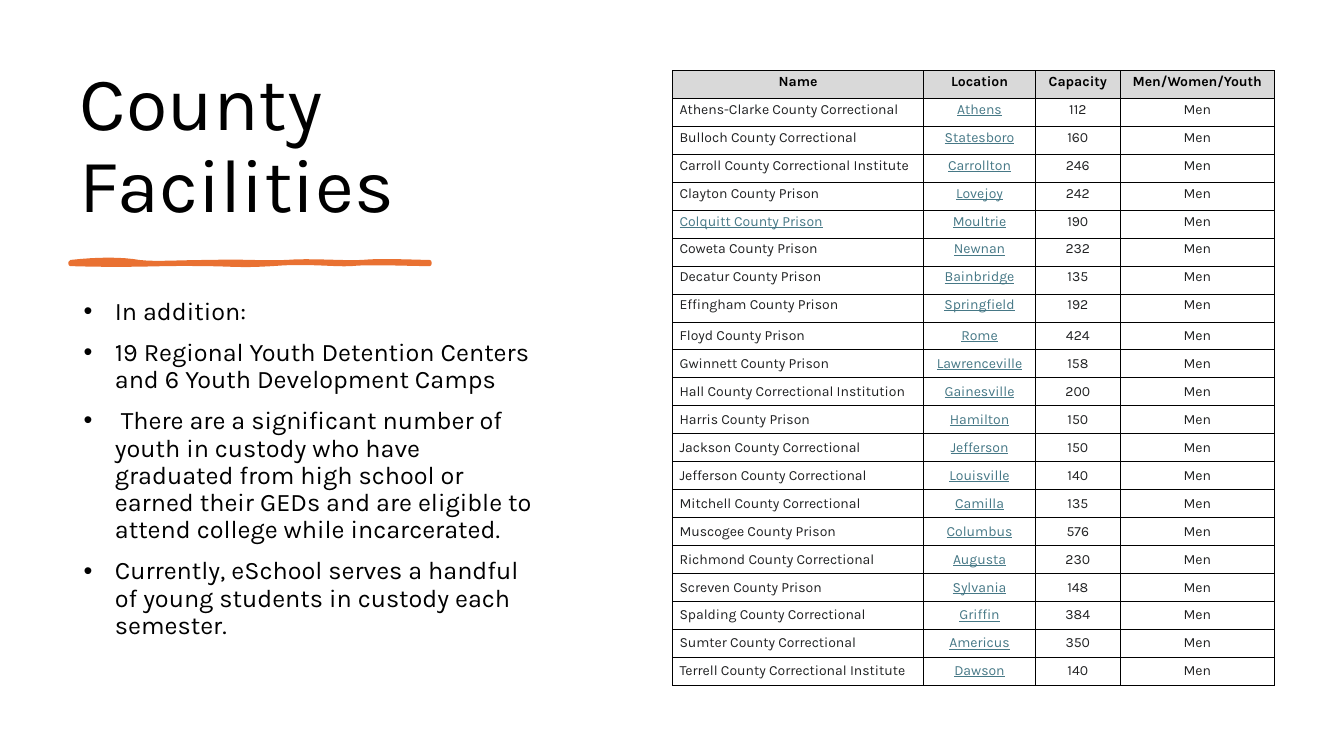
import pptx
import pptx.util
import pptx.dml.color
import pptx.enum.text
import pptx.oxml
import pptx.oxml.ns

PX = 9144
FONT = "Karla"
BLACK = pptx.dml.color.RGBColor(0x00, 0x00, 0x00)
INK = pptx.dml.color.RGBColor(0x20, 0x21, 0x22)
LINK = pptx.dml.color.RGBColor(0x46, 0x78, 0x86)
GREY = pptx.dml.color.RGBColor(0xD9, 0xD9, 0xD9)
ORANGE = pptx.dml.color.RGBColor(0xE9, 0x71, 0x32)
ANCHOR = pptx.enum.text.MSO_ANCHOR
ALIGN = pptx.enum.text.PP_ALIGN

BULLETS = [
    "In addition:",
    "19 Regional Youth Detention Centers and 6 Youth Development Camps",
    " There are a significant number of youth in custody who have graduated "
    "from high school or earned their GEDs and are eligible to attend college "
    "while incarcerated.",
    "Currently, eSchool serves a handful of young students in custody each semester.",
]

HEADER = ["Name", "Location", "Capacity", "Men/Women/Youth"]
COLUMNS = [249, 111, 84, 153]
TABLE_HEIGHT = 610
TOP_ROWS = 9
LINKED_NAME = "Colquitt County Prison"
FACILITIES = [
    ("Athens-Clarke County Correctional", "Athens", 112),
    ("Bulloch County Correctional", "Statesboro", 160),
    ("Carroll County Correctional Institute", "Carrollton", 246),
    ("Clayton County Prison", "Lovejoy", 242),
    (LINKED_NAME, "Moultrie", 190),
    ("Coweta County Prison", "Newnan", 232),
    ("Decatur County Prison", "Bainbridge", 135),
    ("Effingham County Prison", "Springfield", 192),
    ("Floyd County Prison", "Rome", 424),
    ("Gwinnett County Prison", "Lawrenceville", 158),
    ("Hall County Correctional Institution", "Gainesville", 200),
    ("Harris County Prison", "Hamilton", 150),
    ("Jackson County Correctional", "Jefferson", 150),
    ("Jefferson County Correctional", "Louisville", 140),
    ("Mitchell County Correctional", "Camilla", 135),
    ("Muscogee County Prison", "Columbus", 576),
    ("Richmond County Correctional", "Augusta", 230),
    ("Screven County Prison", "Sylvania", 148),
    ("Spalding County Correctional", "Griffin", 384),
    ("Sumter County Correctional", "Americus", 350),
    ("Terrell County Correctional Institute", "Dawson", 140),
]

STROKE_START = (70, 260)
STROKE_CURVES = [
    [(97, 257), (121, 257), (138, 260)],
    [(155, 262), (177, 260), (209, 260)],
    [(241, 259), (260, 261), (284, 260)],
    [(308, 258), (339, 261), (359, 260)],
    [(379, 258), (412, 260), (426, 260)],
    [(426, 260), (426, 261), (426, 262)],
    [(408, 262), (364, 260), (348, 262)],
    [(332, 263), (304, 259), (270, 262)],
    [(235, 264), (231, 262), (199, 262)],
    [(166, 261), (132, 264), (70, 262)],
]
STEPS = 8


def place(sp, left, top, width, height):
    sp.left, sp.top = left * PX, top * PX
    sp.width, sp.height = width * PX, height * PX


def add_run(p, text, size, color, bold=False, underline=False):
    r = p.add_run()
    r.text = text
    f = r.font
    f.name, f.size, f.bold = FONT, pptx.util.Pt(size), bold
    f.underline = underline
    f.color.rgb = color


def add_title(s, text):
    sp = s.shapes.title
    place(sp, 69, 70, 527, 162)
    tf = sp.text_frame
    tf.word_wrap = True
    tf.auto_size = pptx.enum.text.MSO_AUTO_SIZE.NONE
    tf.vertical_anchor = ANCHOR.BOTTOM
    p = tf.paragraphs[0]
    p.alignment = ALIGN.LEFT
    p.line_spacing = 0.9
    add_run(p, text, 54, BLACK)


def add_list(s, items):
    sp = s.placeholders[1]
    place(sp, 73, 291, 472, 382)
    tf = sp.text_frame
    tf.word_wrap = True
    tf.auto_size = pptx.enum.text.MSO_AUTO_SIZE.NONE
    tf.vertical_anchor = ANCHOR.TOP
    for i, item in enumerate(items):
        p = tf.add_paragraph() if i else tf.paragraphs[0]
        p.line_spacing = 0.9
        p.space_before = pptx.util.Pt(10)
        pPr = p._p.get_or_add_pPr()
        pPr.set("marL", str(31 * PX))
        pPr.set("indent", str(-31 * PX))
        for tag, key, value in (("buFont", "typeface", "Arial"), ("buChar", "char", "•")):
            bullet = pptx.oxml.ns.qn("a:" + tag)
            pPr.append(pPr.makeelement(bullet, {key: value}))
        add_run(p, item, 18, BLACK)


def curve_points(start, curves):
    points = []
    for c1, c2, end in curves:
        for i in range(1, STEPS + 1):
            t = i / STEPS
            u = 1 - t
            points.append(tuple(
                round((u**3 * a + 3 * u * u * t * b + 3 * u * t * t * c + t**3 * d) * PX)
                for a, b, c, d in zip(start, c1, c2, end)))
        start = end
    return points


def add_brush_stroke(s):
    x, y = STROKE_START
    fb = s.shapes.build_freeform(x * PX, y * PX)
    fb.add_line_segments(curve_points(STROKE_START, STROKE_CURVES), close=True)
    sp = fb.convert_to_shape()
    sp.shadow.inherit = False
    sp.fill.solid()
    sp.fill.fore_color.rgb = ORANGE
    sp.line.color.rgb = ORANGE
    sp.line.width = pptx.util.Pt(3)


def add_borders(cell):
    tcPr = cell._tc.get_or_add_tcPr()
    for side in "LRTB":
        tcPr.append(pptx.oxml.parse_xml(
            f'<a:ln{side} {pptx.oxml.ns.nsdecls("a")} w="9525"><a:solidFill>'
            f'<a:srgbClr val="{BLACK}"/></a:solidFill></a:ln{side}>'))


def fill_cell(cell, text, row, col):
    header = row == 0
    link = not header and (col == 1 or text == LINKED_NAME)
    cell.margin_left = cell.margin_right = 7 * PX
    cell.margin_top = cell.margin_bottom = 3 * PX
    cell.vertical_anchor = ANCHOR.TOP if row < TOP_ROWS else ANCHOR.MIDDLE
    add_borders(cell)
    if header:
        cell.fill.solid()
        cell.fill.fore_color.rgb = GREY
    else:
        cell.fill.background()
    p = cell.text_frame.paragraphs[0]
    p.alignment = ALIGN.CENTER if header or col else ALIGN.LEFT
    color = BLACK if header else LINK if link else INK
    add_run(p, text, 10, color, header, link)


def add_facility_table(s):
    rows = [HEADER] + [(name, town, str(n), "Men") for name, town, n in FACILITIES]
    frame = s.shapes.add_table(len(rows), len(COLUMNS), 667 * PX, 70 * PX,
                               sum(COLUMNS) * PX, TABLE_HEIGHT * PX)
    table = frame.table
    table.horz_banding = False
    for column, width in zip(table.columns, COLUMNS):
        column.width = width * PX
    for i, row in enumerate(rows):
        table.rows[i].height = TABLE_HEIGHT * PX // len(rows)
        for j, text in enumerate(row):
            fill_cell(table.cell(i, j), text, i, j)


def main():
    prs = pptx.Presentation()
    prs.slide_width, prs.slide_height = 1333 * PX, 750 * PX
    s = prs.slides.add_slide(prs.slide_layouts[1])
    add_title(s, "County Facilities")
    add_brush_stroke(s)
    add_facility_table(s)
    add_list(s, BULLETS)
    prs.save("out.pptx")


if __name__ == "__main__":
    main()
